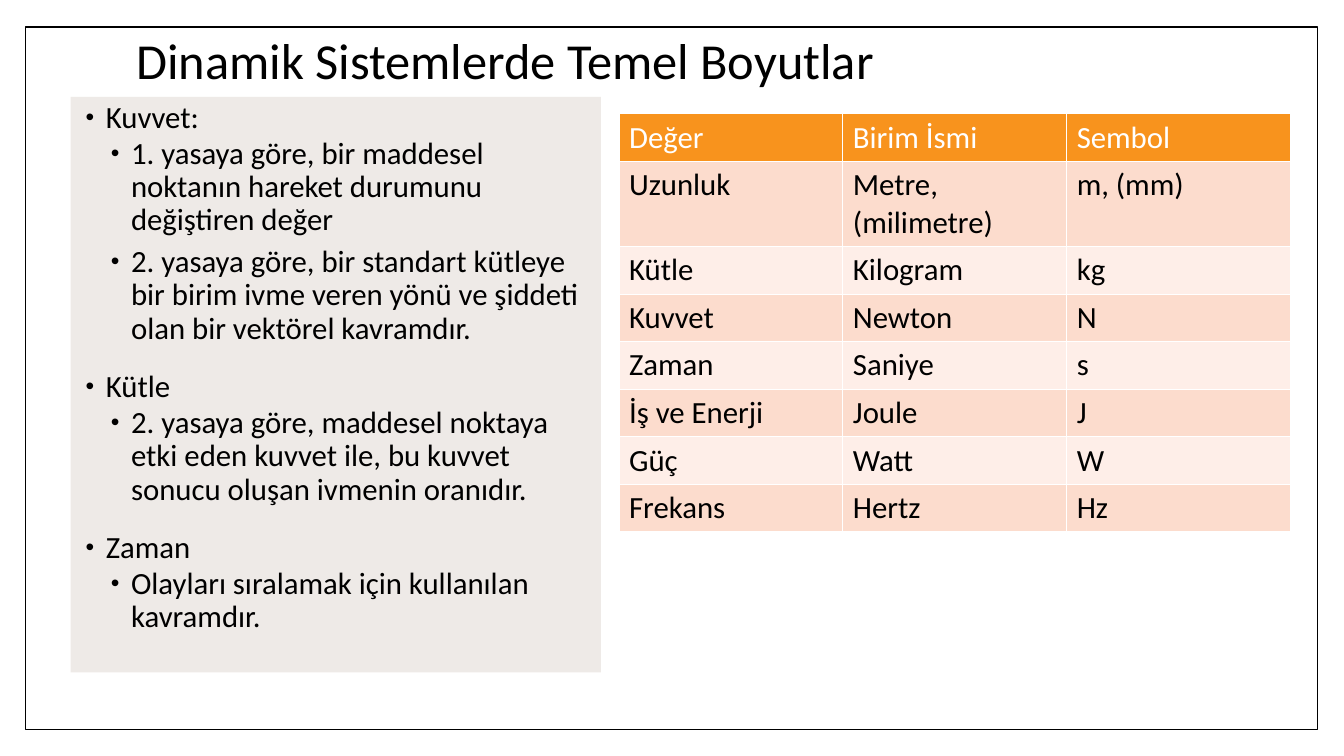
import pptx
import pptx.dml.color
import pptx.enum.shapes
import pptx.enum.text
import pptx.util
from dataclasses import dataclass
from lxml import etree

TITLE = "Dinamik Sistemlerde Temel Boyutlar"
CONCEPTS = [
    ("Kuvvet:", [
        "1. yasaya göre, bir maddesel noktanın hareket durumunu değiştiren değer",
        "2. yasaya göre, bir standart kütleye bir birim ivme veren yönü ve şiddeti "
        "olan bir vektörel kavramdır.",
    ]),
    ("Kütle", [
        "2. yasaya göre, maddesel noktaya etki eden kuvvet ile, bu kuvvet sonucu "
        "oluşan ivmenin oranıdır.",
    ]),
    ("Zaman", ["Olayları sıralamak için kullanılan kavramdır."]),
]
UNITS = [
    ("Değer", "Birim İsmi", "Sembol"),
    ("Uzunluk", "Metre, (milimetre)", "m, (mm)"),
    ("Kütle", "Kilogram", "kg"),
    ("Kuvvet", "Newton", "N"),
    ("Zaman", "Saniye", "s"),
    ("İş ve Enerji", "Joule", "J"),
    ("Güç", "Watt", "W"),
    ("Frekans", "Hertz", "Hz"),
]


@dataclass(frozen=True)
class Theme:
    font: str = "Calibri"
    title_size: int = 36
    text_size: int = 22
    ink: str = "000000"
    paper: str = "FFFFFF"
    panel: str = "EEEAE7"
    header: str = "F8931D"
    bands: tuple = ("FEEEE8", "FCDCCD")


THEME = Theme()
WIDTH, HEIGHT = 13.33, 7.5
FRAME = (0.25, 0.27, 12.82, 6.97)
TITLE_BOX = (1.25, 0.4, 10.8, 0.45)
PANEL_BOX = (0.7, 0.96, 5.26, 5.71)
TABLE_LEFT, TABLE_TOP = 6.14, 1.13
COLUMN_WIDTH, ROW_HEIGHT = 2.22, 0.41
INDENT, HANGING = 0.25, -0.2
SPACING = [(14, 0), (2, 4)]  # points before and after, by list level


def inches(*lengths):
    return [pptx.util.Inches(length) for length in lengths]


def paint(fill, color):
    fill.solid()
    fill.fore_color.rgb = pptx.dml.color.RGBColor.from_string(color)


def style_text(para, size, color):
    for span in para.runs:
        span.font.name = THEME.font
        span.font.size = pptx.util.Pt(size)
        span.font.bold = False
        span.font.color.rgb = pptx.dml.color.RGBColor.from_string(color)


def place(box, bounds):
    box.left, box.top, box.width, box.height = inches(*bounds)


def add_bullet(para):
    properties = para._p.get_or_add_pPr()
    margin, hanging = inches(INDENT * (para.level + 1), HANGING)
    properties.set("marL", str(margin))
    properties.set("indent", str(hanging))
    namespace = "{http://schemas.openxmlformats.org/drawingml/2006/main}"
    color = etree.SubElement(properties, namespace + "buClr")
    etree.SubElement(color, namespace + "srgbClr", val=THEME.ink)
    etree.SubElement(properties, namespace + "buSzPct", val="80000")
    etree.SubElement(properties, namespace + "buFont", typeface="Arial")
    etree.SubElement(properties, namespace + "buChar", char="•")


def add_frame(page):
    frame = page.shapes.add_shape(
        pptx.enum.shapes.MSO_SHAPE.RECTANGLE, *inches(*FRAME))
    frame.shadow.inherit = False
    paint(frame.fill, THEME.paper)
    paint(frame.line.fill, THEME.ink)
    frame.line.width = pptx.util.Pt(1)
    page.shapes._spTree.insert(2, frame._element)  # behind the placeholders


def fill_title(box):
    place(box, TITLE_BOX)
    box.text_frame.text = TITLE
    box.text_frame.auto_size = pptx.enum.text.MSO_AUTO_SIZE.NONE
    box.text_frame.vertical_anchor = pptx.enum.text.MSO_ANCHOR.MIDDLE
    para = box.text_frame.paragraphs[0]
    para.alignment = pptx.enum.text.PP_ALIGN.LEFT
    para.line_spacing = 0.9
    style_text(para, THEME.title_size, THEME.ink)


def fill_concepts(box):
    place(box, PANEL_BOX)
    paint(box.fill, THEME.panel)
    entries = []
    for concept, meanings in CONCEPTS:
        entries.append((0, concept))
        entries.extend((1, meaning) for meaning in meanings)
    box.text_frame.text = "\n".join(text for _, text in entries)
    box.text_frame.auto_size = pptx.enum.text.MSO_AUTO_SIZE.NONE
    for para, (level, _) in zip(box.text_frame.paragraphs, entries):
        para.level = level
        para.line_spacing = 0.9
        para.space_before, para.space_after = map(pptx.util.Pt, SPACING[level])
        add_bullet(para)
        style_text(para, THEME.text_size, THEME.ink)


def add_units(page):
    rows, columns = len(UNITS), len(UNITS[0])
    table = page.shapes.add_table(rows, columns, *inches(
        TABLE_LEFT, TABLE_TOP, columns * COLUMN_WIDTH, rows * ROW_HEIGHT)).table
    for row, values in enumerate(UNITS):
        fill = THEME.bands[row % 2] if row else THEME.header
        color = THEME.ink if row else THEME.paper
        for column, value in enumerate(values):
            cell = table.cell(row, column)
            cell.text_frame.text = value
            paint(cell.fill, fill)
            style_text(cell.text_frame.paragraphs[0], THEME.text_size, color)


def main():
    deck = pptx.Presentation()
    deck.slide_width, deck.slide_height = inches(WIDTH, HEIGHT)
    page = deck.slides.add_slide(deck.slide_layouts[1])
    paint(page.background.fill, THEME.paper)
    add_frame(page)
    fill_title(page.shapes.title)
    fill_concepts(page.placeholders[1])
    add_units(page)
    deck.save("out.pptx")


if __name__ == "__main__":
    main()
